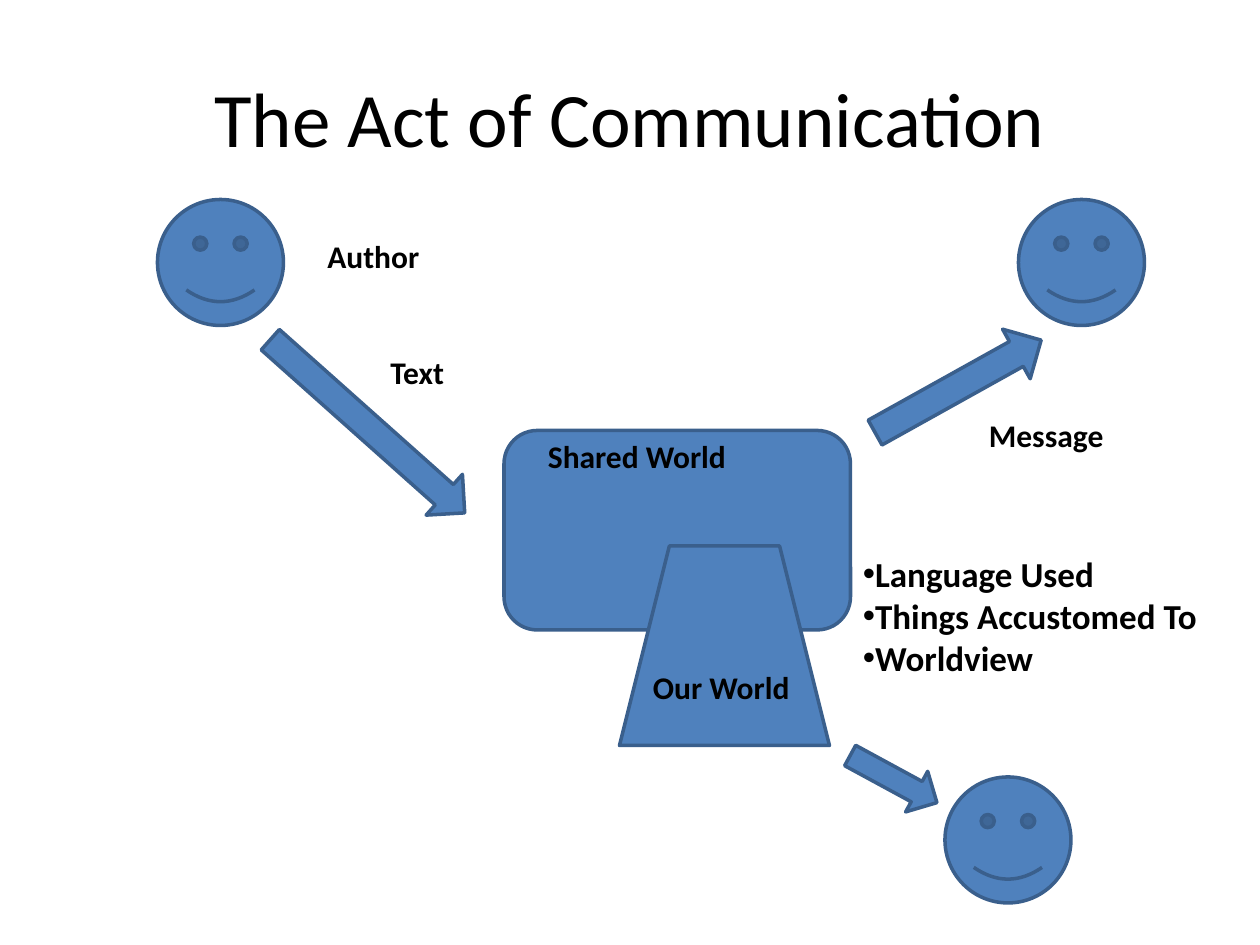
from lxml.etree import SubElement
from pptx import Presentation
from pptx.dml.color import RGBColor
from pptx.enum.shapes import MSO_SHAPE as Shape
from pptx.enum.text import MSO_ANCHOR as Anchor, MSO_AUTO_SIZE as AutoSize, PP_ALIGN as Align
from pptx.oxml.ns import qn
from pptx.util import Inches, Pt

COLUMNS, ROWS, CELLS_PER_INCH = 120, 90, 12
FONT, BLACK, BLUE, EDGE = "Calibri", "000000", "4F81BD", "3A5F8C"

TITLE = "The Act of Communication"
TITLE_AREA = (6, 3.6, 108, 15)
FACES = [(15, 19), (97, 19), (90, 74)]
FACE_SIZE = 12
WORLDS = [
    (Shape.ROUNDED_RECTANGLE, (48, 41, 33, 19)),
    (Shape.TRAPEZOID, (59, 52, 20, 19)),
]
ARROWS = [
    (Shape.UP_ARROW, (82.9, 69.5, 4.4, 9.4), 118.5),
    (Shape.RIGHT_ARROW, (82.2, 34.1, 18.1, 5.4), 330.9),
    (Shape.RIGHT_ARROW, (22.6, 38, 24.8, 5.2), 41.7),
]
LABELS = [
    ("Author", (30, 22, 15, 4.8)),
    ("Text", (36, 33, 11, 4.8)),
    ("Message", (93, 39, 15, 4.8)),
    ("Shared World", (51, 41, 27, 4.8)),
    ("Our World", (61, 63, 16, 4.8)),
]
FACTORS = ["Language Used", "Things Accustomed To", "Worldview"]
FACTORS_AREA = (81, 52, 36, 13.3)


def color(value):
    """Turn a hex string into a colour."""
    return RGBColor.from_string(value)


def place(area):
    """Convert grid cells into slide lengths."""
    return [Inches(cells / CELLS_PER_INCH) for cells in area]


def add_span(para, text, size, bold=False):
    """Add one formatted run."""
    span = para.add_run()
    span.text = text
    span.font.name, span.font.size, span.font.bold = FONT, Pt(size), bold
    span.font.color.rgb = color(BLACK)


def add_title(page):
    """Fill and position the title placeholder."""
    title = page.shapes.title
    title.left, title.top, title.width, title.height = place(TITLE_AREA)
    title.text_frame.vertical_anchor = Anchor.MIDDLE
    para = title.text_frame.paragraphs[0]
    para.alignment = Align.CENTER
    add_span(para, TITLE, 44)


def add_figure(page, kind, area, rotation=0):
    """Draw one blue shape."""
    figure = page.shapes.add_shape(kind, *place(area))
    figure.rotation = rotation
    figure.shadow.inherit = False
    figure.fill.solid()
    figure.fill.fore_color.rgb = color(BLUE)
    figure.line.color.rgb = color(EDGE)
    figure.line.width = Pt(2)


def add_text(page, lines, area, size, bullet=None):
    """Write bold lines in a text box, bulleted if asked."""
    frame = page.shapes.add_textbox(*place(area)).text_frame
    frame.word_wrap = True
    frame.auto_size = AutoSize.SHAPE_TO_FIT_TEXT
    for index, line in enumerate(lines):
        para = frame.add_paragraph() if index else frame.paragraphs[0]
        if bullet:
            properties = para._p.get_or_add_pPr()
            SubElement(properties, qn("a:buFont"), typeface="Arial")
            SubElement(properties, qn("a:buChar"), char=bullet)
        add_span(para, line, size, bold=True)


def main():
    """Build the slide and save it."""
    deck = Presentation()
    deck.slide_width, deck.slide_height = place((COLUMNS, ROWS))
    page = deck.slides.add_slide(deck.slide_layouts[5])
    add_title(page)
    for left, top in FACES:
        add_figure(page, Shape.SMILEY_FACE, (left, top, FACE_SIZE, FACE_SIZE))
    for kind, area in WORLDS:
        add_figure(page, kind, area)
    for kind, area, rotation in ARROWS:
        add_figure(page, kind, area, rotation)
    for text, area in LABELS:
        add_text(page, [text], area, 18)
    add_text(page, FACTORS, FACTORS_AREA, 20, bullet="•")
    deck.save("out.pptx")


if __name__ == "__main__":
    main()
